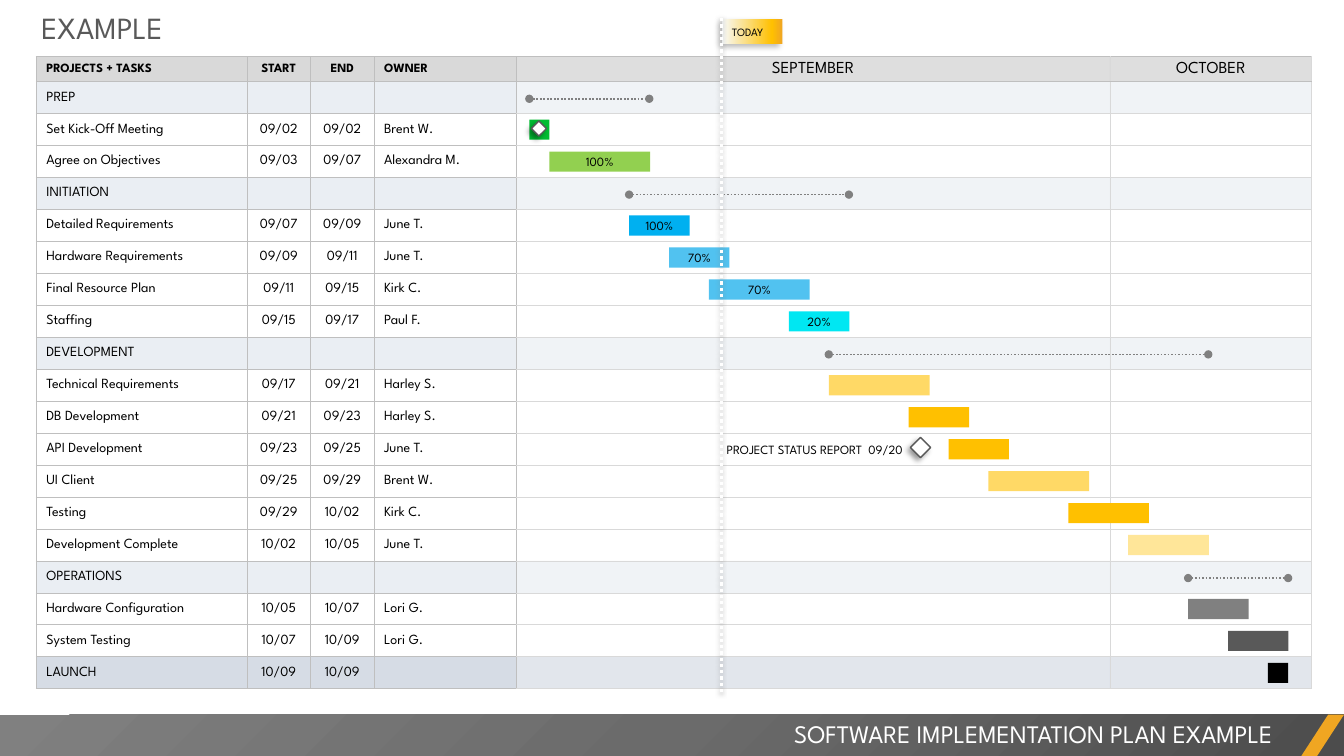
from lxml import etree
from pptx import Presentation
from pptx import util as u
from pptx.dml import color as dml
from pptx.enum import dml as line_styles, shapes, text
from pptx.oxml import ns

LEFT, CENTER, RIGHT = text.PP_ALIGN.LEFT, text.PP_ALIGN.CENTER, text.PP_ALIGN.RIGHT
TABLE_LEFT, TABLE_TOP, HEADER_HEIGHT, ROW_HEIGHT = 0.36, 0.56, 0.25, 0.317
COLUMN_WIDTHS = [2.09, 0.63, 0.63, 1.41, 5.89, 2]
FIRST_DAY_LEFT, DAY_STEP, DAY_WIDTH = 5.25, 0.198, 0.2
BAR_HEIGHT, BAR_OFFSET, SPAN_OFFSET = 0.2, 0.06, 0.17
HEADERS = ["PROJECTS + TASKS", "START", "END", "OWNER", "SEPTEMBER", "OCTOBER"]
LAUNCH = ("LAUNCH", "10/09", "10/09", "", "000000", "")
PHASES = [
    ("PREP", [
        ("Set Kick-Off Meeting", "09/02", "09/02", "Brent W.", "00BD32", ""),
        ("Agree on Objectives", "09/03", "09/07", "Alexandra M.", "92D050", "100%"),
    ]),
    ("INITIATION", [
        ("Detailed Requirements", "09/07", "09/09", "June T.", "00B0F0", "100%"),
        ("Hardware Requirements", "09/09", "09/11", "June T.", "51C2F0", "70%"),
        ("Final Resource Plan", "09/11", "09/15", "Kirk C.", "51C2F0", "70%"),
        ("Staffing", "09/15", "09/17", "Paul F.", "00E7F2", "20%"),
    ]),
    ("DEVELOPMENT", [
        ("Technical Requirements", "09/17", "09/21", "Harley S.", "FFD966", ""),
        ("DB Development", "09/21", "09/23", "Harley S.", "FFC000", ""),
        ("API Development", "09/23", "09/25", "June T.", "FFC000", ""),
        ("UI Client", "09/25", "09/29", "Brent W.", "FFD966", ""),
        ("Testing", "09/29", "10/02", "Kirk C.", "FFC000", ""),
        ("Development Complete", "10/02", "10/05", "June T.", "FFE699", ""),
    ]),
    ("OPERATIONS", [
        ("Hardware Configuration", "10/05", "10/07", "Lori G.", "808080", ""),
        ("System Testing", "10/07", "10/09", "Lori G.", "595959", ""),
    ]),
]


def rgb(value):
    return dml.RGBColor.from_string(value)


def add_xml(parent, tag, **attributes):
    child = etree.SubElement(parent, ns.qn(tag))
    for key, value in attributes.items():
        child.set(key, str(value))
    return child


def day_left(date):
    month, day = map(int, date.split("/"))
    return FIRST_DAY_LEFT + ((month - 9) * 30 + day - 2) * DAY_STEP


def day_count(start, end):
    return round((day_left(end) - day_left(start)) / DAY_STEP) + 1


def row_top(row):
    return TABLE_TOP + HEADER_HEIGHT + row * ROW_HEIGHT


class PlanSlide:
    """Draws the elements of one slide in a shared style."""

    font = "League Spartan"

    def __init__(self, slide):
        self.slide = slide
        self.shapes = slide.shapes

    def set_words(self, frame, words, size, color="000000", align=LEFT, bold=False):
        frame.text = words
        paragraph = frame.paragraphs[0]
        paragraph.alignment = align
        for run in paragraph.runs:
            run.font.name, run.font.size, run.font.bold = self.font, u.Pt(size), bold
            run.font.color.rgb = rgb(color)
        if not words:
            add_xml(paragraph._p, "a:endParaRPr", sz=size * 100)

    def title(self, words, left, top, width, height):
        title = self.shapes.title
        title.left, title.top, title.width, title.height = map(u.Inches, (left, top, width, height))
        title.text_frame.vertical_anchor = text.MSO_ANCHOR.TOP
        self.set_words(title.text_frame, words, 22, "595959")

    def label(self, words, left, top, width, height, size, color="000000",
              anchor=text.MSO_ANCHOR.TOP):
        box = self.shapes.add_textbox(*map(u.Inches, (left, top, width, height)))
        box.text_frame.word_wrap = True
        box.text_frame.vertical_anchor = anchor
        self.set_words(box.text_frame, words, size, color, RIGHT)

    def block(self, kind, left, top, width, height, fill, outline=None):
        block = self.shapes.add_shape(kind, *map(u.Inches, (left, top, width, height)))
        block.shadow.inherit = False
        block.fill.solid()
        block.fill.fore_color.rgb = rgb(fill)
        if outline:
            block.line.color.rgb = rgb(outline)
            block.line.width = u.Pt(1)
        else:
            block.line.fill.background()
        return block

    def bar(self, left, top, width, fill, progress):
        bar = self.block(shapes.MSO_SHAPE.RECTANGLE, left, top, width, BAR_HEIGHT, fill)
        if progress:
            frame = bar.text_frame
            frame.margin_top = frame.margin_bottom = frame.margin_left = frame.margin_right = 0
            frame.vertical_anchor = text.MSO_ANCHOR.MIDDLE
            self.set_words(frame, progress, 9, align=CENTER)

    def milestone(self, left, top, size):
        diamond = self.block(shapes.MSO_SHAPE.DIAMOND, left, top, size, size, "FFFFFF", "595959")
        self.shadow(diamond, "000000", 40, 4, 3)

    def shadow(self, shape, color, opacity, blur, distance):
        properties = shape._element.spPr
        effects = properties.find(ns.qn("a:effectLst"))
        if effects is None:
            effects = add_xml(properties, "a:effectLst")
        outer = add_xml(effects, "a:outerShdw", blurRad=u.Pt(blur), dist=u.Pt(distance),
                        dir=135 * 60000, algn="tr", rotWithShape=0)
        add_xml(add_xml(outer, "a:srgbClr", val=color), "a:alpha", val=opacity * 1000)

    def gradient(self, shape, stops, radial=False):
        solid = shape._element.spPr.find(ns.qn("a:solidFill"))
        gradient = etree.Element(ns.qn("a:gradFill"), rotWithShape="1")
        stop_list = add_xml(gradient, "a:gsLst")
        for position, color in stops:
            add_xml(add_xml(stop_list, "a:gs", pos=position * 1000), "a:srgbClr", val=color)
        if radial:
            add_xml(add_xml(gradient, "a:path", path="circle"),
                    "a:fillToRect", l=100000, t=100000)
        else:
            add_xml(gradient, "a:lin", ang=0, scaled=0)
        solid.getparent().replace(solid, gradient)

    def dotted(self, start, end, color, width, ends=False):
        line = self.shapes.add_connector(shapes.MSO_CONNECTOR.STRAIGHT,
                                         *map(u.Inches, (*start, *end)))
        line.line.color.rgb = rgb(color)
        line.line.width = u.Pt(width)
        line.line.dash_style = line_styles.MSO_LINE.ROUND_DOT
        if ends:
            for tag in ("a:headEnd", "a:tailEnd"):
                add_xml(line.line._get_or_add_ln(), tag, type="oval")
        add_xml(line._element.spPr, "a:effectLst")
        return line

    def cell(self, cell, row, column, words, fill, opacity):
        timeline, header = column > 3, row == 0
        properties = cell._tc.get_or_add_tcPr()
        dark = {"L": column <= 4, "R": not timeline,
                "T": not timeline or row <= 1, "B": not timeline or header}
        for side, is_dark in dark.items():
            border = add_xml(properties, "a:ln" + side, w=u.Pt(0.5))
            add_xml(add_xml(border, "a:solidFill"), "a:srgbClr",
                    val="BFBFBF" if is_dark else "D9D9D9")
        cell.fill.solid()
        cell.fill.fore_color.rgb = rgb(fill)
        if timeline:
            add_xml(properties.find(ns.qn("a:solidFill"))[0], "a:alpha", val=opacity * 1000)
            cell.margin_left = cell.margin_right = cell.margin_top = cell.margin_bottom = 0
        cell.vertical_anchor = text.MSO_ANCHOR.MIDDLE
        size = (12 if timeline else 9) if header else 10
        align = LEFT if column in (0, 3) else CENTER
        self.set_words(cell.text_frame, words, size, align=align, bold=header and not timeline)

    def table(self, rows):
        height = HEADER_HEIGHT + ROW_HEIGHT * (len(rows) - 1)
        table = self.shapes.add_table(len(rows), len(COLUMN_WIDTHS), *map(
            u.Inches, (TABLE_LEFT, TABLE_TOP, sum(COLUMN_WIDTHS), height))).table
        table.first_row = table.horz_banding = False
        for column, width in zip(table.columns, COLUMN_WIDTHS):
            column.width = u.Inches(width)
        for r, (words, fill, timeline_fill, opacity) in enumerate(rows):
            table.rows[r].height = u.Inches(ROW_HEIGHT if r else HEADER_HEIGHT)
            for c, entry in enumerate(words):
                self.cell(table.cell(r, c), r, c, entry,
                          timeline_fill if c > 3 else fill, opacity)


def main():
    deck = Presentation()
    deck.slide_width, deck.slide_height = u.Inches(13.33), u.Inches(7.5)
    plan = PlanSlide(deck.slides.add_slide(deck.slide_layouts[5]))
    rectangle = shapes.MSO_SHAPE.RECTANGLE

    plan.title("EXAMPLE", 0.31, 0.04, 6.62, 0.47)
    footer = plan.block(rectangle, 0, 7.09, 13.33, 0.42, "4C4C4C")
    plan.gradient(footer, [(0, "4C4C4C"), (50, "6B6B6B"), (100, "808080")], radial=True)
    accent = plan.block(shapes.MSO_SHAPE.PARALLELOGRAM, 12.9, 7.09, 0.43, 0.42, "F0A622")
    accent.adjustments[0] = 0.65
    plan.label("SOFTWARE IMPLEMENTATION PLAN EXAMPLE", 5.25, 7.08, 7.47, 0.4, 18, "FFFFFF")

    rows, bars, spans = [(HEADERS, "D9D9D9", "BFBFBF", 50)], [], []
    for phase, tasks in PHASES:
        spans.append((len(rows) - 1, tasks[0][1], tasks[-1][2]))
        rows.append(([phase] + [""] * 5, "EAEEF3", "EAEEF3", 70))
        for task in tasks:
            bars.append((len(rows) - 1, task))
            rows.append(([*task[:4], "", ""], "FFFFFF", "FFFFFF", 50))
    bars.append((len(rows) - 1, LAUNCH))
    rows.append(([*LAUNCH[:4], "", ""], "D6DCE5", "D6DCE5", 70))
    plan.table(rows)

    for row, (_, start, end, _, fill, progress) in bars:
        plan.bar(day_left(start), row_top(row) + BAR_OFFSET,
                 day_count(start, end) * DAY_WIDTH, fill, progress)
    plan.milestone(5.27, 1.2, 0.15)
    plan.milestone(9.03, 4.34, 0.2)
    for row, start, end in spans:
        y = row_top(row) + SPAN_OFFSET
        plan.dotted((day_left(start), y), (day_left(end) + DAY_WIDTH, y), "808080", 1.25, ends=True)

    plan.shapes = plan.slide.shapes.add_group_shape().shapes
    today = plan.block(rectangle, 7.16, 0.19, 0.6, 0.25, "FFC000")
    plan.gradient(today, [(0, "F7FAFD"), (83, "FFC000"), (100, "F0A622")])
    plan.shadow(today, "000000", 25, 4, 3)
    today.text_frame.vertical_anchor = text.MSO_ANCHOR.MIDDLE
    today.text_frame.word_wrap = False
    plan.set_words(today.text_frame, "TODAY", 8)
    today_line = plan.dotted((7.16, 0.18), (7.16, 6.88), "FFFFFF", 2.25)
    plan.shadow(today_line, "808080", 50, 3, 1)
    plan.shapes = plan.slide.shapes

    plan.label("PROJECT STATUS REPORT  09/20", 6.86, 4.31, 2.19, 0.3, 9,
               anchor=text.MSO_ANCHOR.MIDDLE)
    deck.save("out.pptx")


if __name__ == "__main__":
    main()
